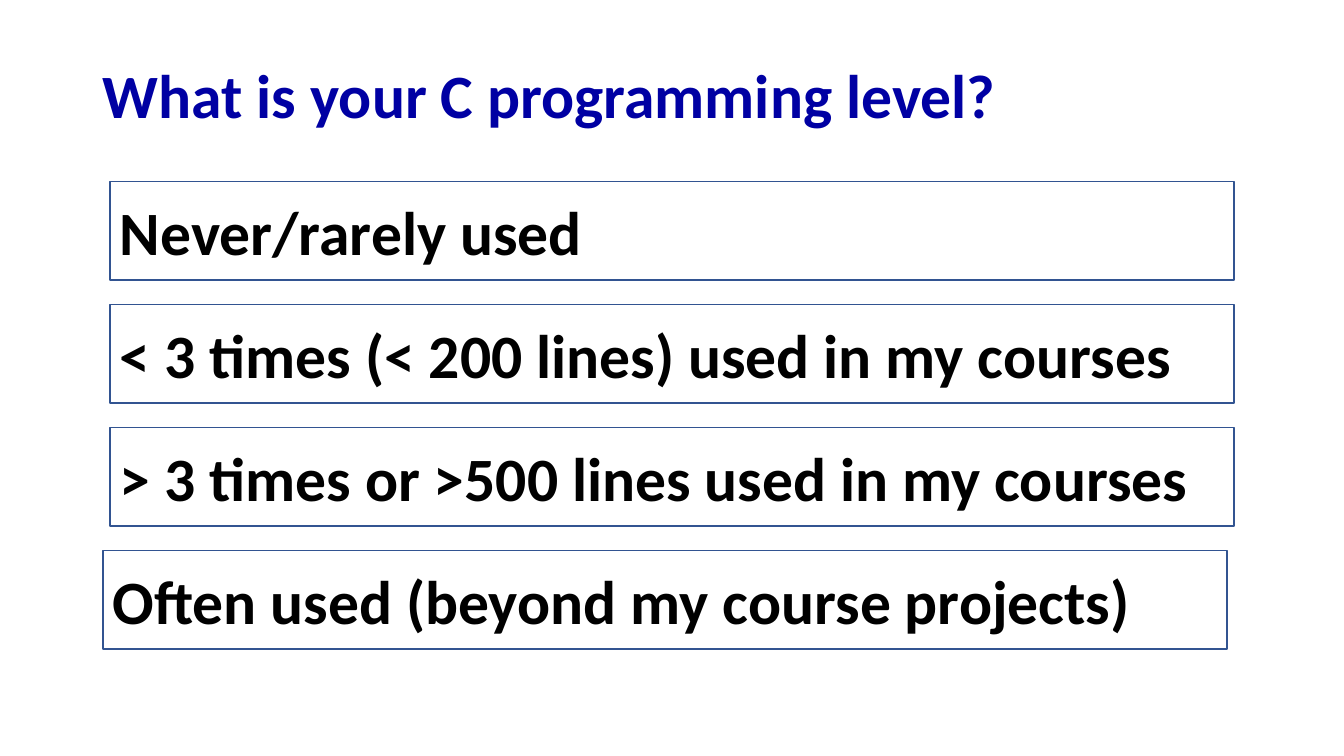
from pptx import Presentation
from pptx.dml.color import RGBColor
from pptx.enum.shapes import MSO_SHAPE
from pptx.enum.text import MSO_ANCHOR, MSO_AUTO_SIZE, PP_ALIGN
from pptx.util import Inches, Pt

RECTANGLE = MSO_SHAPE.RECTANGLE
MIDDLE = MSO_ANCHOR.MIDDLE
NO_AUTOFIT = MSO_AUTO_SIZE.NONE
LEFT = PP_ALIGN.LEFT

TITLE_ONLY_LAYOUT = 5
TITLE_BLUE = "0000A3"
BORDER_BLUE = "325491"
BLACK = "000000"

ANSWERS = [
    ("Never/rarely used", 1.09),
    ("< 3 times (< 200 lines) used in my courses", 1.09),
    ("> 3 times or >500 lines used in my courses", 1.09),
    ("Often used (beyond my course projects)", 1.02),
]
FIRST_TOP = 1.8
ROW_STEP = 1.22


def color(hex_value):
    """Turn a hex string into a colour."""
    return RGBColor.from_string(hex_value)


def apply_format(target, values):
    """Set each named attribute on the target."""
    for name, value in values.items():
        setattr(target, name, value)


class SlideBuilder:
    """Holds the text style and the slide being built."""

    font_format = {"name": "Calibri", "size": Pt(44), "bold": True}
    frame_format = {
        "word_wrap": True,
        "auto_size": NO_AUTOFIT,
        "vertical_anchor": MIDDLE,
    }

    def __init__(self, slide):
        """Keep the slide to draw on."""
        self.slide = slide

    def fill_text(self, shape, text, text_color, line_spacing):
        """Put one left-aligned paragraph in the shape in the shared style."""
        apply_format(shape.text_frame, self.frame_format)
        paragraph = shape.text_frame.paragraphs[0]
        paragraph.text = text
        apply_format(paragraph, {"alignment": LEFT, "line_spacing": line_spacing})
        font = paragraph.runs[0].font
        apply_format(font, self.font_format)
        font.color.rgb = color(text_color)

    def title(self, text, left, top, width, height):
        """Place and fill the title placeholder."""
        shape = self.slide.shapes.title
        apply_format(shape, {
            "left": Inches(left),
            "top": Inches(top),
            "width": Inches(width),
            "height": Inches(height),
        })
        self.fill_text(shape, text, TITLE_BLUE, 0.9)

    def answer_box(self, text, left, top, width, height):
        """Add an outlined box holding one answer."""
        shape = self.slide.shapes.add_shape(
            RECTANGLE, Inches(left), Inches(top), Inches(width), Inches(height)
        )
        shape.shadow.inherit = False
        shape.fill.background()
        shape.line.color.rgb = color(BORDER_BLUE)
        shape.line.width = Pt(1)
        self.fill_text(shape, text, BLACK, 1.0)


def main():
    """Build and save the presentation."""
    presentation = Presentation()
    presentation.slide_width = Inches(13.33)
    presentation.slide_height = Inches(7.5)
    layout = presentation.slide_layouts[TITLE_ONLY_LAYOUT]
    builder = SlideBuilder(presentation.slides.add_slide(layout))
    builder.title("What is your C programming level?", 0.92, 0.49, 11.5, 0.98)
    for row, (text, left) in enumerate(ANSWERS):
        builder.answer_box(text, left, FIRST_TOP + row * ROW_STEP, 11.15, 0.98)
    presentation.save("out.pptx")


if __name__ == "__main__":
    main()
